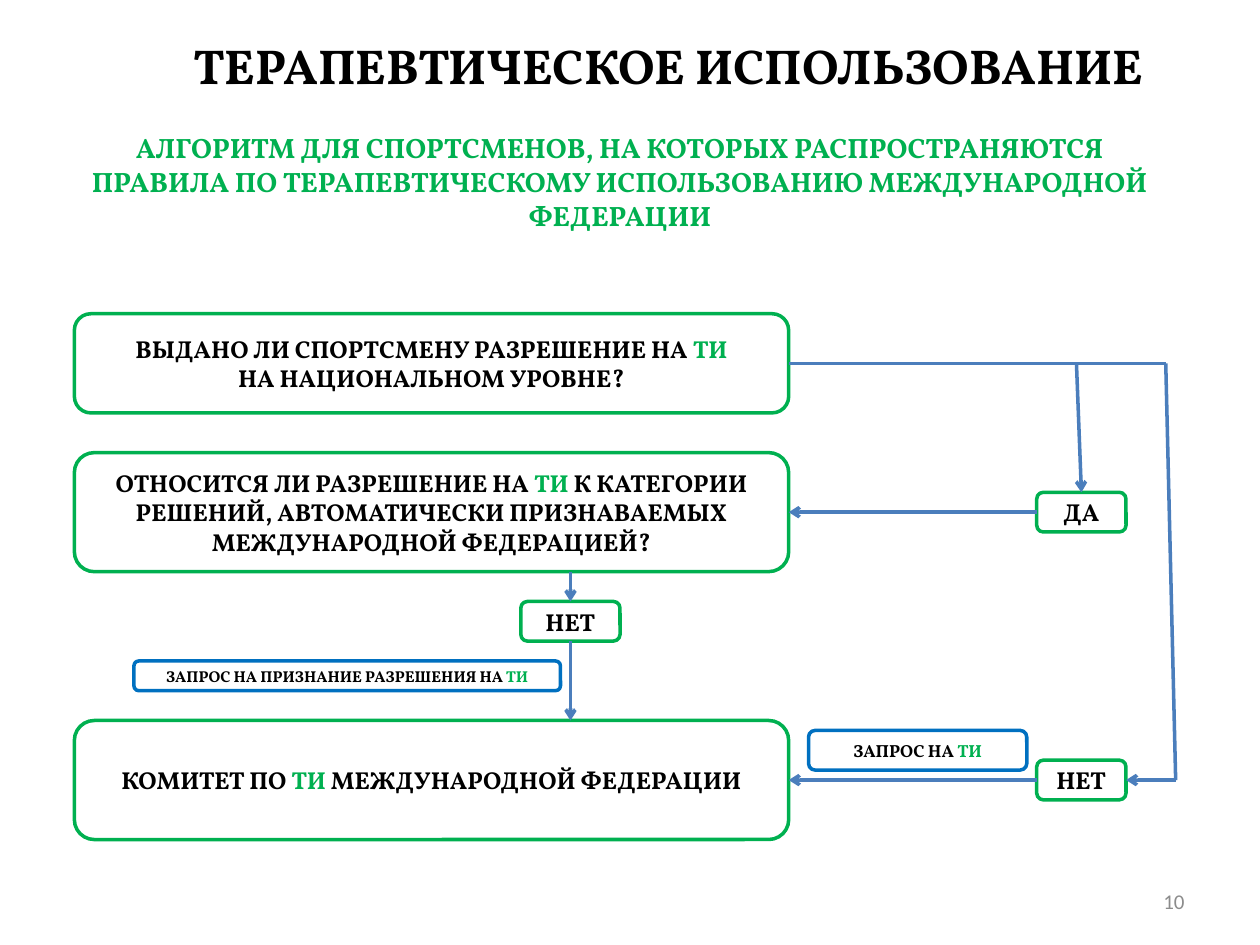
"""Build the slide with the therapeutic use decision flowchart."""
from lxml import etree
from pptx import Presentation
from pptx import util as u
from pptx.dml.color import RGBColor
from pptx.enum import shapes, text
from pptx.oxml.ns import qn

COLORS = {name: RGBColor.from_string(value) for name, value in {
    "black": "000000", "green": "00B050", "blue": "0070C0",
    "arrow": "4B7EBC", "gray": "8C8C8C"}.items()}
CELL, LEFT, TOP = u.Mm(2), u.Mm(15), u.Mm(63.25)
TOP_SIDE, LEFT_SIDE, BOTTOM_SIDE, RIGHT_SIDE = range(4)

presentation = Presentation()
presentation.slide_width, presentation.slide_height = u.Inches(10), u.Inches(7.5)
slide = presentation.slides.add_slide(presentation.slide_layouts[5])


def grid_point(column, row):
    return int(LEFT + column * CELL), int(TOP + row * CELL)


def write(frame, content, size, color="black", align="CENTER", anchor="MIDDLE",
          font="Vollkorn", bold=True):
    """Fill a text frame; parts between asterisks turn green."""
    frame.word_wrap = True
    frame.auto_size = text.MSO_AUTO_SIZE.NONE
    frame.vertical_anchor = text.MSO_ANCHOR[anchor]
    for index, line in enumerate(content.split("\n")):
        paragraph = frame.add_paragraph() if index else frame.paragraphs[0]
        paragraph.alignment = text.PP_ALIGN[align]
        paragraph.font.name, paragraph.font.bold = font, bold
        paragraph.font.size = u.Pt(size)
        paragraph.font.color.rgb = COLORS[color]
        for part, words in enumerate(line.split("*")):
            if words:
                run = paragraph.add_run()
                run.text = words
                if part % 2:
                    run.font.color.rgb = COLORS["green"]


title = slide.shapes.title
title.left, title.top, title.width, title.height = (
    u.Inches(0.35), 0, u.Inches(8.82), u.Inches(1.03))
write(title.text_frame, "ТЕРАПЕВТИЧЕСКОЕ ИСПОЛЬЗОВАНИЕ", 28, align="RIGHT")

subtitle = slide.shapes.add_textbox(
    u.Inches(0.51), u.Inches(0.99), u.Inches(8.82), u.Inches(5.91))
write(subtitle.text_frame,
      "АЛГОРИТМ ДЛЯ СПОРТСМЕНОВ, НА КОТОРЫХ РАСПРОСТРАНЯЮТСЯ ПРАВИЛА ПО "
      "ТЕРАПЕВТИЧЕСКОМУ ИСПОЛЬЗОВАНИЮ МЕЖДУНАРОДНОЙ ФЕДЕРАЦИИ",
      16, "green", anchor="TOP")

boxes = {}
for name, column, row, columns, rows, outline, size, content in [
    ("national", 0, 0, 72, 10, "green", 14,
     "ВЫДАНО ЛИ СПОРТСМЕНУ РАЗРЕШЕНИЕ НА *ТИ*\nНА НАЦИОНАЛЬНОМ УРОВНЕ?"),
    ("category", 0, 14, 72, 12, "green", 14,
     "ОТНОСИТСЯ ЛИ РАЗРЕШЕНИЕ НА *ТИ* К КАТЕГОРИИ РЕШЕНИЙ, "
     "АВТОМАТИЧЕСКИ ПРИЗНАВАЕМЫХ МЕЖДУНАРОДНОЙ ФЕДЕРАЦИЕЙ?"),
    ("yes", 97, 18, 9, 4, "green", 14, "ДА"),
    ("no permit", 97, 45, 9, 4, "green", 14, "НЕТ"),
    ("committee", 0, 41, 72, 12, "green", 14,
     "КОМИТЕТ ПО *ТИ* МЕЖДУНАРОДНОЙ ФЕДЕРАЦИИ"),
    ("request", 74, 42, 22, 4, "blue", 10, "ЗАПРОС НА *ТИ*"),
    ("recognition", 6, 35, 43, 3, "blue", 9,
     "ЗАПРОС НА ПРИЗНАНИЕ РАЗРЕШЕНИЯ НА *ТИ*"),
    ("not automatic", 45, 29, 10, 4, "green", 14, "НЕТ"),
]:
    shape = slide.shapes.add_shape(
        shapes.MSO_SHAPE.ROUNDED_RECTANGLE, *grid_point(column, row),
        columns * CELL, rows * CELL)
    shape.shadow.inherit = False
    shape.fill.background()
    shape.line.color.rgb = COLORS[outline]
    shape.line.width = u.Pt(2)
    write(shape.text_frame, content, size)
    boxes[name] = shape

for start, end, begin_join, end_join, arrow in [
    ((101, 5), (101.5, 18), None, ("yes", TOP_SIDE), True),
    ((101, 5), (72, 5), None, ("national", RIGHT_SIDE), False),
    ((101, 5), (110, 5), None, None, False),
    ((110, 5), (111, 47), None, None, False),
    ((111, 47), (106, 47), None, ("no permit", RIGHT_SIDE), True),
    ((97, 20), (72, 20), ("yes", LEFT_SIDE), ("category", RIGHT_SIDE), True),
    ((97, 47), (72, 47), ("no permit", LEFT_SIDE), ("committee", RIGHT_SIDE), True),
    ((50, 26), (50, 29), None, ("not automatic", TOP_SIDE), True),
    ((50, 33), (50, 41), ("not automatic", BOTTOM_SIDE), None, True),
]:
    connector = slide.shapes.add_connector(
        shapes.MSO_CONNECTOR.STRAIGHT, *grid_point(*start), *grid_point(*end))
    if begin_join:
        connector.begin_connect(boxes[begin_join[0]], begin_join[1])
    if end_join:
        connector.end_connect(boxes[end_join[0]], end_join[1])
    connector.line.color.rgb = COLORS["arrow"]
    connector.line.width = u.Pt(2)
    properties = connector._element.spPr
    if arrow:
        etree.SubElement(properties.find(qn("a:ln")), qn("a:tailEnd"), type="arrow")
    etree.SubElement(properties, qn("a:effectLst"))

page_number = slide.shapes.add_textbox(
    u.Inches(7.17), u.Inches(6.95), u.Inches(2.33), u.Inches(0.4))
write(page_number.text_frame, "10", 12, "gray", "RIGHT", font="Calibri", bold=False)

presentation.save("out.pptx")
